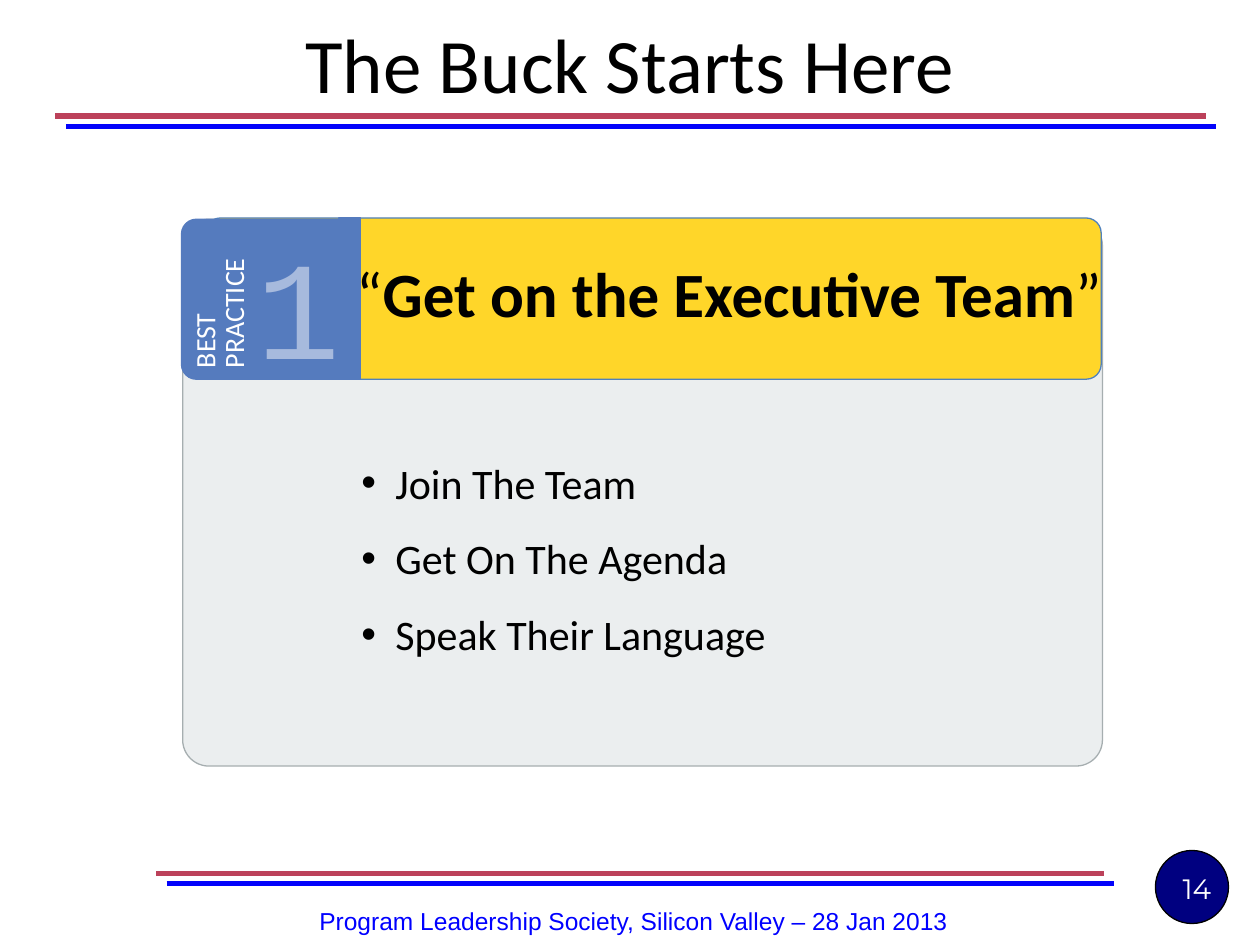
from lxml import etree
from pptx import Presentation
from pptx.dml.color import RGBColor
from pptx.enum.shapes import MSO_CONNECTOR, MSO_SHAPE
from pptx.enum.text import MSO_ANCHOR, PP_ALIGN
from pptx.oxml.ns import qn
from pptx.util import Inches, Pt

LEFT, CENTER, RIGHT = PP_ALIGN.LEFT, PP_ALIGN.CENTER, PP_ALIGN.RIGHT
TOP, MIDDLE = MSO_ANCHOR.TOP, MSO_ANCHOR.MIDDLE
RECT, ROUND, OVAL = MSO_SHAPE.RECTANGLE, MSO_SHAPE.ROUNDED_RECTANGLE, MSO_SHAPE.OVAL

COLORS = {
    "black": "000000", "white": "FFFFFF", "red": "BC415A", "blue": "0303FB",
    "footer": "0000FF", "navy": "000080", "panel": "CED5D6", "panel_edge": "A6AEB0",
    "yellow": "FFD629", "banner_edge": "4F81BD", "tab": "557BBE", "digit": "A7BADD",
}
TITLE = "The Buck Starts Here"
FOOTER = "Program Leadership Society, Silicon Valley – 28 Jan 2013"
PAGE = "14"
LABEL = ["BEST", "PRACTICE"]
NUMBER = "1"
HEADLINE = [("“", False), ("Get on the Executive Team", True), ("”", False)]
BULLETS = ["Join The Team", "Get On The Agenda", "Speak Their Language"]

RULES = [(1.24, 8.76, 6.93), (0.44, 9.57, 0.92)]  # left, right, height on slide
BANNER_TOP, BANNER_H = 1.73, 1.28
SHAPES = [  # kind, box, fill, line, corner
    (OVAL, (9.17, 6.75, 0.58, 0.58), "navy", "black", None),
    (ROUND, (1.45, 1.74, 7.3, 4.34), "panel", "panel_edge", 0.048),
    (ROUND, (1.63, BANNER_TOP, 7.11, BANNER_H), "yellow", "banner_edge", 0.093),
    (ROUND, (1.44, 1.74, 1.39, 1.27), "tab", "tab", 0.093),
    (RECT, (2.69, BANNER_TOP, 0.17, BANNER_H), "tab", "tab", None),
]


def rgb(name):
    return RGBColor.from_string(COLORS[name])


def inches(box):
    return [Inches(v) for v in box]


def add_rule(slide, left, right, y):
    """Red line with a hard blue shadow below and to the right."""
    line = slide.shapes.add_connector(
        MSO_CONNECTOR.STRAIGHT, *inches((left, y, right, y)))
    line.line.color.rgb, line.line.width = rgb("red"), Pt(3)
    effects = etree.SubElement(line._element.spPr, qn("a:effectLst"))
    shadow = etree.SubElement(effects, qn("a:outerShdw"), blurRad="0",
                              dist=str(Pt(8.5)), dir=str(45 * 60000),
                              algn="ctr", rotWithShape="0")
    etree.SubElement(shadow, qn("a:srgbClr"), val=COLORS["blue"])


def add_shape(slide, kind, box, fill, line, corner):
    s = slide.shapes.add_shape(kind, *inches(box))
    s.shadow.inherit = False
    s.fill.solid()
    s.fill.fore_color.rgb = rgb(fill)
    s.line.color.rgb, s.line.width = rgb(line), Pt(0.75)
    if corner:
        s.adjustments[0] = corner
    return s


def style(tf, size, font, color, align=LEFT, anchor=TOP):
    tf.vertical_anchor = anchor
    for p in tf.paragraphs:
        p.alignment = align
        for r in p.runs:
            r.font.size, r.font.name = Pt(size), font
            r.font.color.rgb = rgb(color)


def add_text(slide, box, lines, *look, wrap=True):
    s = slide.shapes.add_textbox(*inches(box))
    tf = s.text_frame
    tf.word_wrap = wrap
    tf.text = "\n".join(lines)
    style(tf, *look)
    return s


def main():
    prs = Presentation()
    prs.slide_width, prs.slide_height = Inches(10), Inches(7.5)
    slide = prs.slides.add_slide(prs.slide_layouts[5])

    title = slide.shapes.title
    title.left, title.top, title.width, title.height = inches((0.28, 0.2, 9.44, 0.6))
    title.text_frame.text = TITLE
    style(title.text_frame, 44, "Calibri", "black", CENTER, MIDDLE)

    for rule in RULES:
        add_rule(slide, *rule)
    for spec_row in SHAPES:
        s = add_shape(slide, *spec_row)
        if spec_row[2] == "panel":
            color = s.fill._xPr.find(qn("a:solidFill"))[0]
            etree.SubElement(color, qn("a:alpha"), val="39000")

    add_text(slide, (1.31, 7.05, 7.44, 0.52), [FOOTER],
             14, "Arial", "footer", CENTER, MIDDLE)
    add_text(slide, (7.38, 6.87, 2.33, 0.52), [PAGE], 16, "Montserrat", "white", RIGHT)
    add_text(slide, (1.94, 1.69, 1.09, 1.43), [NUMBER], 80, "Courier New", "digit")

    label = add_text(slide, (1.1, 2.08, 1.32, 0.56), LABEL,
                     16, "Calibri", "white", wrap=False)
    label.rotation = 270
    for p in label.text_frame.paragraphs:
        p.line_spacing = 0.85

    headline = add_text(slide, (2.73, 1.97, 6.19, 0.71), [], wrap=False,
                        *(36, "Calibri", "black"))
    for text, bold in HEADLINE:
        r = headline.text_frame.paragraphs[0].add_run()
        r.text, r.font.bold = text, bold
    style(headline.text_frame, 36, "Calibri", "black")

    body = add_text(slide, (2.77, 3.58, 4.96, 1.78), BULLETS, 24, "Calibri", "black")
    for p in body.text_frame.paragraphs:
        pPr = p._p.get_or_add_pPr()
        pPr.set("marL", str(Inches(0.27)))
        pPr.set("indent", str(-Inches(0.27)))
        etree.SubElement(pPr, qn("a:buFont"), typeface="Arial")
        etree.SubElement(pPr, qn("a:buChar"), char="•")
        p.space_after = Pt(14.4)

    prs.save("out.pptx")


if __name__ == "__main__":
    main()
